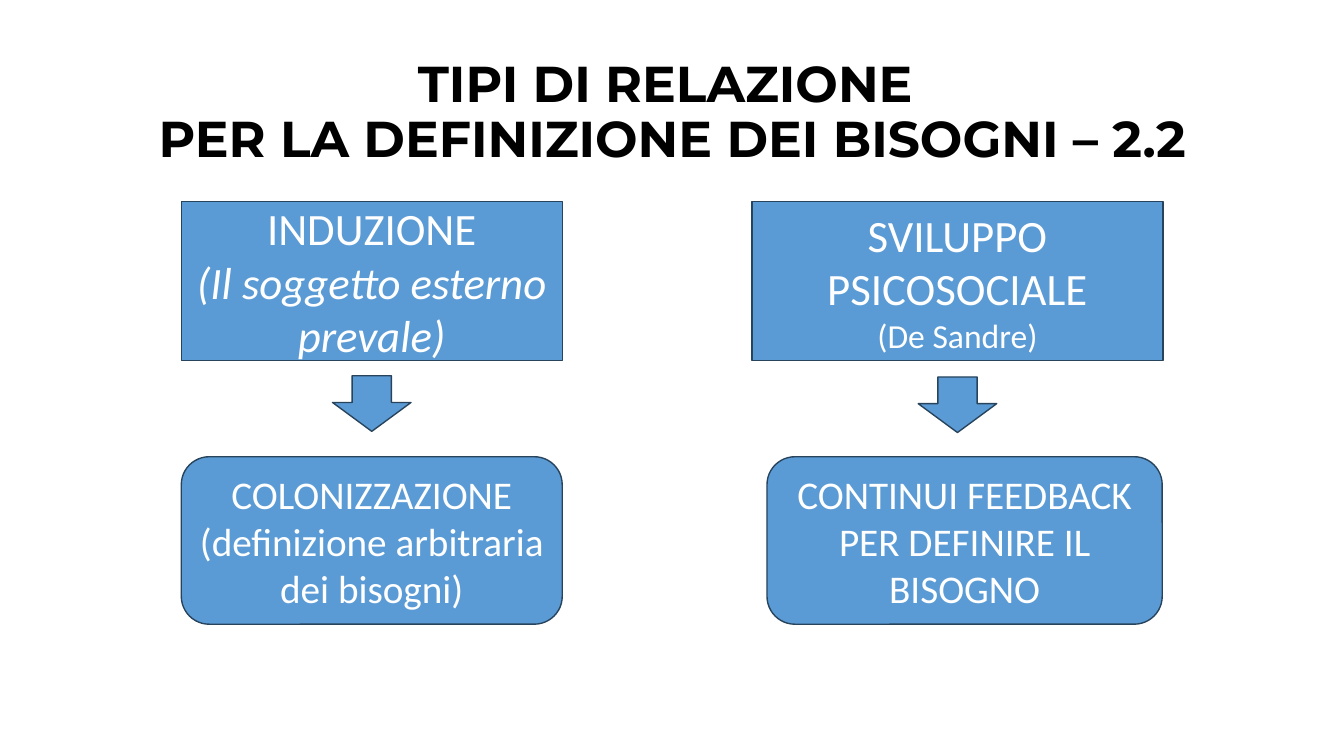
from pptx import Presentation
from pptx.dml.color import RGBColor as Rgb
from pptx.enum.shapes import MSO_SHAPE as Geo
from pptx.enum.text import MSO_ANCHOR as Anchor, MSO_AUTO_SIZE as Fit, PP_ALIGN as Align
from pptx.util import Cm, Pt

HUES = {"fill": "5B9BD5", "edge": "28445D", "text": "FFFFFF", "title": "000000"}


class Deck:
    face = {"name": "Calibri"}
    head = {"name": "Montserrat", "size": Pt(36), "bold": True}
    frame = {"word_wrap": True, "auto_size": Fit.NONE, "vertical_anchor": Anchor.MIDDLE}

    def __init__(self, wide, high):
        self.show = Presentation()
        self.show.slide_width, self.show.slide_height = Cm(wide), Cm(high)
        self.slide = self.show.slides.add_slide(self.show.slide_layouts[5])

    def apply(self, item, style):
        for key, value in style.items():
            setattr(item, key, value)

    def ink(self, font, hue, style):
        self.apply(font, style)
        font.color.rgb = Rgb.from_string(HUES[hue])

    def title(self, box, lines):
        shape = self.slide.shapes.title
        self.apply(shape, dict(zip(("left", "top", "width", "height"), map(Cm, box))))
        self.apply(shape.text_frame, self.frame)
        para = shape.text_frame.paragraphs[0]
        self.apply(para, {"alignment": Align.CENTER, "line_spacing": 0.9})
        for i, line in enumerate(lines):
            if i:
                para.add_line_break()
            run = para.add_run()
            run.text = line
            self.ink(run.font, "title", self.head)

    def shape(self, kind, box):
        shape = self.slide.shapes.add_shape(kind, *map(Cm, box))
        shape.shadow.inherit = False
        shape.fill.solid()
        shape.fill.fore_color.rgb = Rgb.from_string(HUES["fill"])
        shape.line.color.rgb = Rgb.from_string(HUES["edge"])
        shape.line.width = Pt(1)
        return shape

    def box(self, kind, box, lines):
        frame = self.shape(kind, box).text_frame
        self.apply(frame, self.frame)
        for i, (text, size, slant) in enumerate(lines):
            para = frame.add_paragraph() if i else frame.paragraphs[0]
            para.alignment = Align.CENTER
            run = para.add_run()
            run.text = text
            self.ink(run.font, "text", {**self.face, "size": Pt(size), "italic": slant})

    def arrow(self, mid, top):
        wide, high = 1.98, 1.4
        arrow = self.shape(Geo.DOWN_ARROW, (mid - wide / 2, top, wide, high))
        arrow.adjustments[0], arrow.adjustments[1] = 0.5, 0.52


def main():
    deck = Deck(33.87, 19.05)
    deck.title((2.34, 1.02, 29.21, 3.68),
               ("TIPI DI RELAZIONE ", "PER LA DEFINIZIONE DEI BISOGNI – 2.2"))
    flows = [
        (4.57, 9.6, [("INDUZIONE", 32, False), ("(Il soggetto esterno prevale)", 32, True)],
         9.47, 4.57, 9.6,
         [("COLONIZZAZIONE", 28, False), ("(definizione arbitraria dei bisogni)", 28, False)]),
        (18.95, 10.36, [("SVILUPPO PSICOSOCIALE", 32, False), ("(De Sandre)", 24, False)],
         9.5, 19.33, 9.96, [("CONTINUI FEEDBACK PER DEFINIRE IL BISOGNO", 28, False)]),
    ]
    for left, wide, cause, top, start, span, effect in flows:
        deck.box(Geo.RECTANGLE, (left, 5.08, wide, 4.01), cause)
        deck.arrow(left + wide / 2, top)
        deck.box(Geo.ROUNDED_RECTANGLE, (start, 11.51, span, 4.22), effect)
    deck.show.save("out.pptx")


if __name__ == "__main__":
    main()
